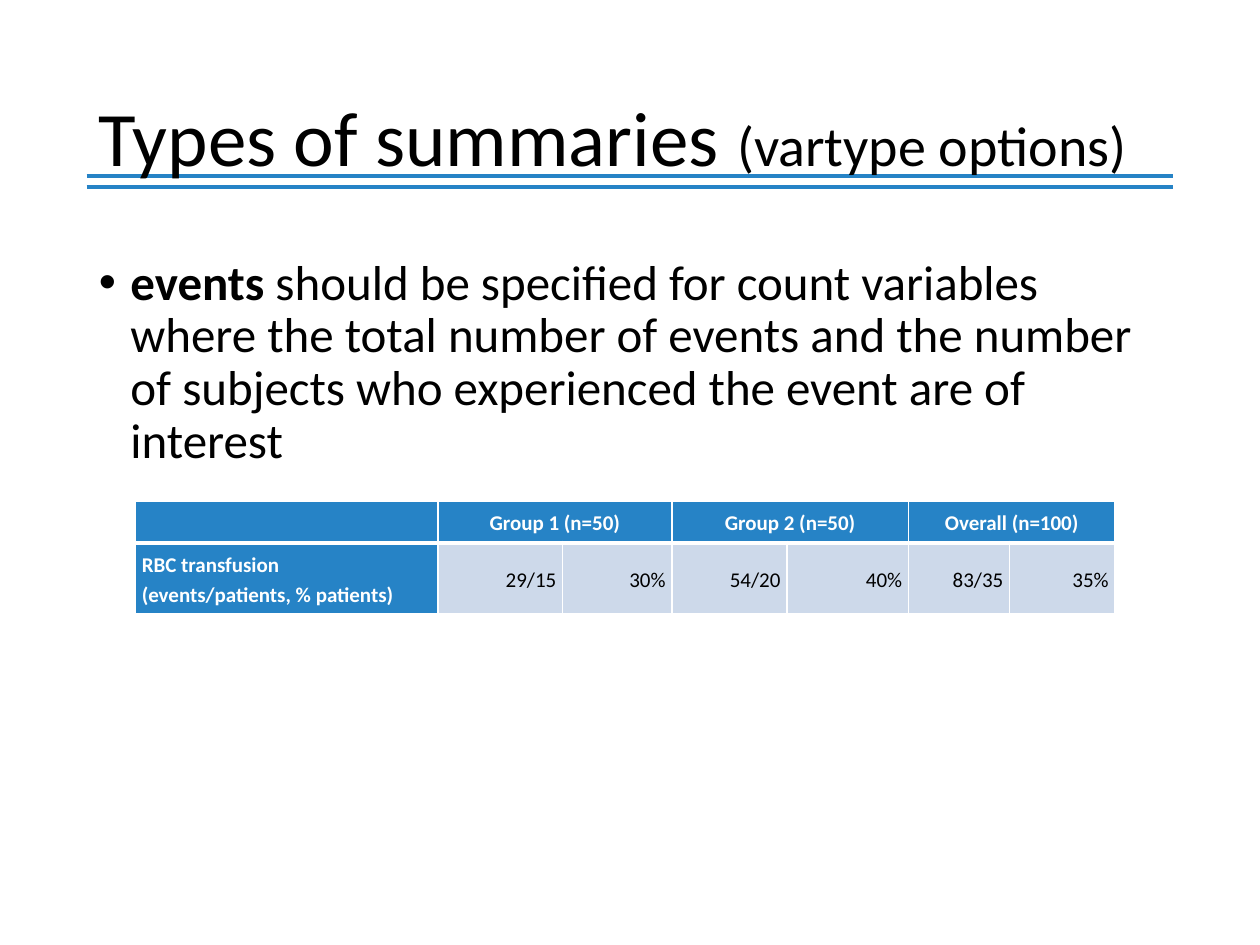
from pptx import Presentation
from pptx.dml.color import RGBColor as RGB
from pptx.enum.text import MSO_ANCHOR as ANCHOR, PP_ALIGN as ALIGN
from pptx.oxml import parse_xml
from pptx.oxml.ns import nsdecls
from pptx.util import Pt

COLORS = {"text": "000000", "accent": "2683C6", "white": "FFFFFF", "cell": "CDD9EA"}
A_NS = nsdecls("a")


class Deck:
    """Holds the style and the current slide."""

    font = "Calibri"

    def __init__(self, width, height):
        self.prs = Presentation()
        self.prs.slide_width, self.prs.slide_height = Pt(width), Pt(height)
        self.s = self.prs.slides.add_slide(self.prs.slide_layouts[6])

    def color(self, name):
        return RGB.from_string(COLORS[name])

    def run(self, p, text, size, color="text", bold=False):
        r = p.add_run()
        r.text = text
        for key, value in {"name": self.font, "size": Pt(size), "bold": bold}.items():
            setattr(r.font, key, value)
        r.font.color.rgb = self.color(color)

    def line(self, x1, x2, y, width):
        sp = self.s.shapes.add_connector(1, Pt(x1), Pt(y), Pt(x2), Pt(y))
        sp.line.color.rgb = self.color("accent")
        sp.line.width = Pt(width)
        sp._element.spPr.append(parse_xml(f"<a:effectLst {A_NS}/>"))

    def text(self, box, runs, anchor=ANCHOR.TOP, bullet_indent=0):
        tf = self.s.shapes.add_textbox(*map(Pt, box)).text_frame
        tf.word_wrap, tf.vertical_anchor = True, anchor
        p = tf.paragraphs[0]
        p.line_spacing = 0.9
        if bullet_indent:
            pPr = p._p.get_or_add_pPr()
            pPr.set("marL", str(Pt(bullet_indent)))
            pPr.set("indent", str(-Pt(bullet_indent)))
            pPr.append(parse_xml(f'<a:buFont {A_NS} typeface="Arial"/>'))
            pPr.append(parse_xml(f'<a:buChar {A_NS} char="•"/>'))
        for run in runs:
            self.run(p, *run)

    def borders(self, cell, **widths):
        tcPr = cell._tc.get_or_add_tcPr()
        for i, side in enumerate("LRTB"):
            tcPr.insert(i, parse_xml(
                f'<a:ln{side} {A_NS} w="{Pt(widths.get(side, 1))}"><a:solidFill>'
                f'<a:srgbClr val="{COLORS["white"]}"/></a:solidFill></a:ln{side}>'))

    def cell(self, cell, text, fill, color, align, bold, size=12):
        margins = [f"margin_{side}" for side in ("left", "right", "top", "bottom")]
        style = {"vertical_anchor": ANCHOR.MIDDLE, **dict.fromkeys(margins, Pt(3.6))}
        for key, value in style.items():
            setattr(cell, key, value)
        cell.fill.solid()
        cell.fill.fore_color.rgb = self.color(fill)
        p = cell.text_frame.paragraphs[0]
        p.alignment, p.line_spacing = align, 1.15
        if text:
            self.run(p, text, size, color, bold)
        else:
            p._p.get_or_add_endParaRPr().set("sz", str(size * 100))

    def table(self, left, top, widths, heights, rows):
        sp = self.s.shapes.add_table(len(rows), len(widths), Pt(left), Pt(top),
                                     Pt(sum(widths)), Pt(sum(heights)))
        tbl = sp.table
        for col, width in zip(tbl.columns, widths):
            col.width = Pt(width)
        for i, (row, height) in enumerate(zip(rows, heights)):
            tbl.rows[i].height = Pt(height)
            for j, text in enumerate(row):
                head = i == 0 or j == 0
                align = ALIGN.CENTER if i == 0 else ALIGN.LEFT if j == 0 else ALIGN.RIGHT
                cell = tbl.cell(i, j)
                self.cell(cell, text, "accent" if head else "cell",
                          "white" if head else "text", align, head)
                self.borders(cell, **({"B": 3} if i == 0 else {"T": 3}))
        # Each group heading covers a pair of columns
        for j in range(1, len(widths), 2):
            tbl.cell(0, j).merge(tbl.cell(0, j + 1))


def main():
    deck = Deck(720, 540)
    left, width = 49.5, 621

    # Double rule under the title
    for y in (100.8, 106.7):
        deck.line(left, left + width, y, 2.25)

    # Title and bullet
    deck.text((left, 28.75, width, 104.4),
              [("Types of summaries ", 44), ("(vartype options)", 32)], ANCHOR.MIDDLE)
    deck.text((left, 143.75, width, 342.6),
              [("events", 28, "text", True),
               (" should be specified for count variables where the total number of "
                "events and the number of subjects who experienced the event are of "
                "interest", 28)], bullet_indent=18)

    # Example summary
    deck.table(77.4, 286.2, [172.8, 71.3, 62.4, 65.7, 69.6, 57.8, 60.2], [24, 40.5], [
        ["", "Group 1 (n=50)", "", "Group 2 (n=50)", "", "Overall (n=100)", ""],
        ["RBC transfusion (events/patients, % patients)",
         "29/15", "30%", "54/20", "40%", "83/35", "35%"],
    ])

    deck.prs.save("out.pptx")


if __name__ == "__main__":
    main()
